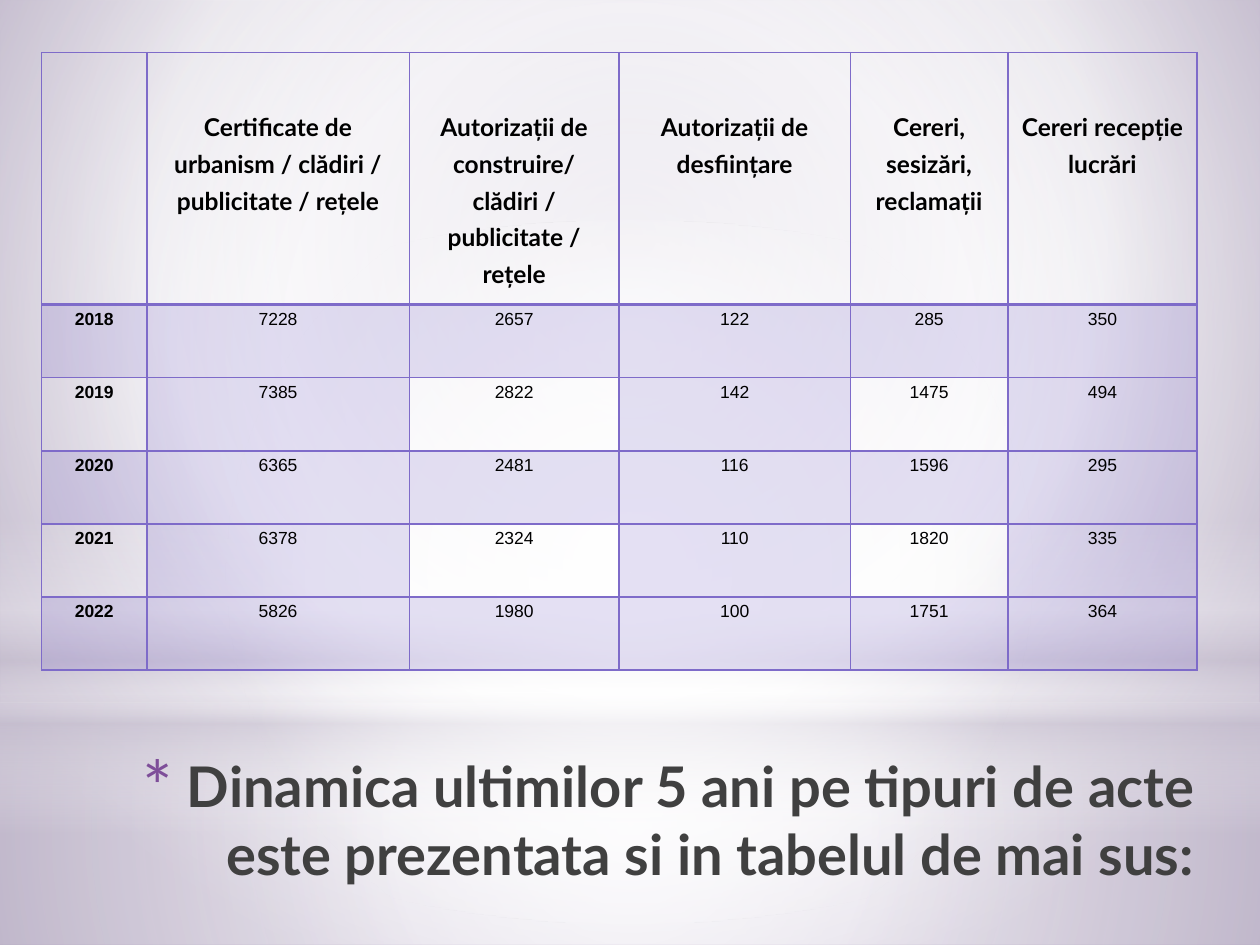
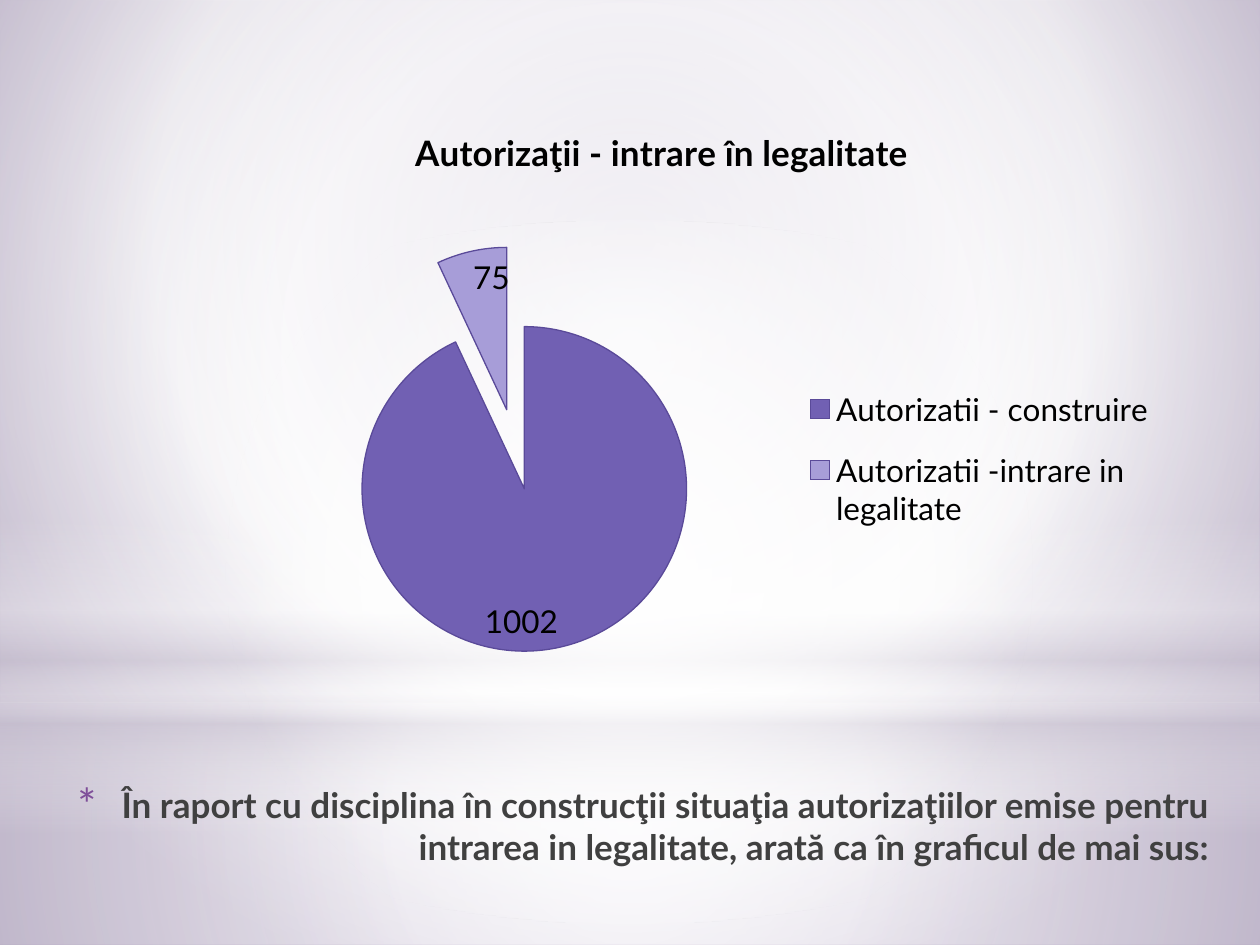
from lxml.etree import SubElement
from pptx import Presentation
from pptx.chart.data import CategoryChartData
from pptx.dml.color import RGBColor
from pptx.enum.chart import XL_CHART_TYPE, XL_LABEL_POSITION, XL_LEGEND_POSITION
from pptx.enum.shapes import MSO_SHAPE
from pptx.enum.text import MSO_ANCHOR, MSO_AUTO_SIZE, PP_ALIGN
from pptx.oxml.ns import qn
from pptx.oxml.xmlchemy import OxmlElement
from pptx.util import Cm, Pt

# Shared colours and fonts
BLACK = RGBColor(0x00, 0x00, 0x00)
WHITE = RGBColor(0xFF, 0xFF, 0xFF)
CHARCOAL = RGBColor(0x40, 0x40, 0x40)
GREY = RGBColor(0x69, 0x67, 0x6D)
MIST = RGBColor(0xC9, 0xC2, 0xD1)
LILAC = RGBColor(0xC1, 0xB7, 0xCD)
MAUVE = RGBColor(0xA1, 0x91, 0xB5)
VIOLET = RGBColor(0x7E, 0x6B, 0xC9)
BULLET_PURPLE = RGBColor(0x7E, 0x4E, 0x99)
PIE_DARK = RGBColor(0x71, 0x60, 0xB3)
PIE_LIGHT = RGBColor(0xA7, 0x9D, 0xD8)
PIE_LINE = RGBColor(0x5A, 0x4A, 0x99)
HEAD_FONT = "Lato"
BODY_FONT = "Arial"

CENTRE = (50, 50, 50, 50)
TITLE_STOPS = [(0, BLACK, 100), (40, CHARCOAL, 100), (100, GREY, 65)]
BACKGROUND_STOPS = [(0, LILAC, 100), (60, WHITE, 100), (100, MAUVE, 100)]

# Backdrop: shape, top and height in cm, gradient stops, circle centre (None = vertical)
BACKDROP = [
    (MSO_SHAPE.RECTANGLE, 14.17, 4.88,
     [(0, WHITE, 91), (37, WHITE, 76), (100, MIST, 79)], CENTRE),
    (MSO_SHAPE.RECTANGLE, 0, 14.17,
     [(0, WHITE, 89), (48, WHITE, 62), (100, MIST, 79)], CENTRE),
    (MSO_SHAPE.RECTANGLE, 10.46, 6.35,
     [(0, WHITE, 0), (29, WHITE, 30), (45, MIST, 40), (55, WHITE, 26),
      (65, MIST, 60), (100, WHITE, 0)], None),
    (MSO_SHAPE.OVAL, 4.45, 14.17, [(0, WHITE, 100), (56, WHITE, 0)], CENTRE),
]

HEADERS = ["", "Certificate de urbanism / clădiri / publicitate / rețele",
           "Autorizații de construire/ clădiri / publicitate / rețele",
           "Autorizații de desființare", "Cereri, sesizări, reclamații",
           "Cereri recepție lucrări"]
ACTS_BY_YEAR = [
    (2018, 7228, 2657, 122, 285, 350),
    (2019, 7385, 2822, 142, 1475, 494),
    (2020, 6365, 2481, 116, 1596, 295),
    (2021, 6378, 2324, 110, 1820, 335),
    (2022, 5826, 1980, 100, 1751, 364),
]
COLUMN_WIDTHS = [2.12, 5.29, 4.23, 4.66, 3.18, 3.81]


def style(target, **values):
    for name, value in values.items():
        setattr(target, name, value)


def add_child(parent, tag, **attributes):
    child = SubElement(parent, qn(tag))
    for name, value in attributes.items():
        child.set(name, str(value))
    return child


def set_gradient(fill, holder, stops, centre=None):
    """Fill with a circular gradient, or a vertical one when there is no centre."""
    fill.gradient()
    grad = OxmlElement("a:gradFill")
    grad.set("rotWithShape", "1")
    gs_list = add_child(grad, "a:gsLst")
    for position, colour, alpha in stops:
        gs = add_child(gs_list, "a:gs", pos=position * 1000)
        clr = add_child(gs, "a:srgbClr", val=colour)
        if alpha < 100:
            add_child(clr, "a:alpha", val=alpha * 1000)
    if centre:
        circle = add_child(grad, "a:path", path="circle")
        add_child(circle, "a:fillToRect",
                  **{side: value * 1000 for side, value in zip("ltrb", centre)})
    else:
        add_child(grad, "a:lin", ang=5400000, scaled=0)
    holder.replace(holder.find(qn("a:gradFill")), grad)


def build_backdrop(prs, layout):
    """Draw the shared backdrop and place it beneath the layout's placeholders."""
    master = prs.slide_master
    fill = master.background.fill
    fill.gradient()
    set_gradient(fill, next(master.element.iter(qn("p:bgPr"))),
                 BACKGROUND_STOPS, (20, 10, 20, 60))
    s = prs.slides[0]
    for i, (kind, top, height, stops, centre) in enumerate(BACKDROP):
        sp = s.shapes.add_shape(kind, 0, Cm(top), prs.slide_width, Cm(height))
        sp.shadow.inherit = False
        sp.line.fill.background()
        set_gradient(sp.fill, sp.element.spPr, stops, centre)
        layout.shapes.element.insert(2 + i, sp.element)


def set_title(s, text, box, size):
    sp = s.shapes.title
    style(sp, **dict(zip(("left", "top", "width", "height"), map(Cm, box))))
    tf = sp.text_frame
    style(tf, word_wrap=True, auto_size=MSO_AUTO_SIZE.NONE,
          vertical_anchor=MSO_ANCHOR.TOP)
    p = tf.paragraphs[0]
    p.alignment = PP_ALIGN.RIGHT
    # Asterisk bullet with a hanging indent
    pPr = p._p.get_or_add_pPr()
    pPr.set("marL", str(Cm(0.89)))
    pPr.set("indent", str(-Cm(0.89)))
    add_child(add_child(pPr, "a:buClr"), "a:srgbClr", val=BULLET_PURPLE)
    add_child(pPr, "a:buSzPct", val=128000)
    add_child(pPr, "a:buFont", typeface=HEAD_FONT)
    add_child(pPr, "a:buChar", char="*")
    r = p.add_run()
    r.text = text
    style(r.font, name=HEAD_FONT, size=Pt(size), bold=True)
    set_gradient(r.font.fill, r._r.rPr, TITLE_STOPS)


def set_borders(cell, widths):
    tcPr = cell._tc.get_or_add_tcPr()
    for i, (side, width) in enumerate(widths.items()):
        ln = OxmlElement(f"a:ln{side}")
        ln.set("w", str(Pt(width)))
        add_child(add_child(ln, "a:solidFill"), "a:srgbClr", val=VIOLET)
        tcPr.insert(i, ln)


def fill_cell(cell, row, col, text):
    is_header = row == 0
    style(cell, margin_left=Cm(0.18), margin_right=Cm(0.18), margin_bottom=0,
          margin_top=Cm(1.06) if is_header else 0, vertical_anchor=MSO_ANCHOR.TOP)
    # Tint every other row and every other column
    if not is_header and (row % 2 or col % 2):
        cell.fill.solid()
        cell.fill.fore_color.rgb = VIOLET
        add_child(next(cell._tc.tcPr.iter(qn("a:srgbClr"))), "a:alpha", val=20000)
    else:
        cell.fill.background()
    set_borders(cell, {"L": 1, "R": 1, "T": 2 if row == 1 else 1,
                       "B": 2 if is_header else 1})
    p = cell.text_frame.paragraphs[0]
    style(p, alignment=PP_ALIGN.CENTER, line_spacing=1.25)
    if text:
        r = p.add_run()
        r.text = text
        style(r.font, name=HEAD_FONT if is_header else BODY_FONT,
              size=Pt(14 if is_header else 10), bold=is_header or col == 0)
        r.font.color.rgb = BLACK


def add_acts_table(s):
    rows = [HEADERS, *ACTS_BY_YEAR]
    table = s.shapes.add_table(len(rows), len(HEADERS), Cm(0.84), Cm(1.06),
                               Cm(sum(COLUMN_WIDTHS)), Cm(12.45)).table
    style(table, first_row=False, horz_banding=False)
    for column, width in zip(table.columns, COLUMN_WIDTHS):
        column.width = Cm(width)
    for i, values in enumerate(rows):
        table.rows[i].height = Cm(1.474 if i else 5.08)
        for j, value in enumerate(values):
            fill_cell(table.cell(i, j), i, j, str(value))


def manual_layout(x, y, w, h, inner=False):
    layout = OxmlElement("c:layout")
    manual = add_child(layout, "c:manualLayout")
    if inner:
        add_child(manual, "c:layoutTarget", val="inner")
    for tag in ("xMode", "yMode"):
        add_child(manual, f"c:{tag}", val="edge")
    for tag, value in zip("xywh", (x, y, w, h)):
        add_child(manual, f"c:{tag}", val=value)
    return layout


def add_permits_pie(s):
    data = CategoryChartData()
    data.categories = ["Autorizatii - construire", "Autorizatii -intrare in legalitate"]
    data.add_series("Series 1", (1002, 75))
    chart = s.shapes.add_chart(XL_CHART_TYPE.PIE, Cm(3.18), Cm(2.03),
                               Cm(20.32), Cm(12.78), data).chart
    style(chart.font, name=HEAD_FONT, size=Pt(18))
    chart.font.color.rgb = BLACK

    # Title
    chart.has_title = True
    p = chart.chart_title.text_frame.paragraphs[0]
    r = p.add_run()
    r.text = "Autorizaţii - intrare în legalitate"
    style(r.font, name=HEAD_FONT, size=Pt(20), bold=True)
    r.font.color.rgb = BLACK

    # Legend
    chart.has_legend = True
    style(chart.legend, position=XL_LEGEND_POSITION.RIGHT, include_in_layout=False)
    position = chart.legend._element.find(qn("c:legendPos"))
    position.addnext(manual_layout(0.64, 0.42, 0.35, 0.29))

    # Plot area
    plot = chart.plots[0]
    plot.vary_by_categories = True
    plot_area = next(chart.element.iter(qn("c:plotArea")))
    for old in plot_area.findall(qn("c:layout")):
        plot_area.remove(old)
    plot_area.insert(0, manual_layout(0.07, 0.23, 0.57, 0.64, inner=True))

    # Slices
    series = plot.series[0]
    explosion = OxmlElement("c:explosion")
    explosion.set("val", "25")
    series._element.find(qn("c:tx")).addnext(explosion)
    for i, colour in enumerate((PIE_DARK, PIE_LIGHT)):
        look = series.points[i].format
        look.fill.solid()
        look.fill.fore_color.rgb = colour
        look.line.color.rgb = PIE_LINE
        look.line.width = Pt(0.75)

    # Value labels
    plot.has_data_labels = True
    style(plot.data_labels, show_value=True, show_percentage=False,
          position=XL_LABEL_POSITION.INSIDE_END)


def main():
    prs = Presentation()
    prs.slide_width, prs.slide_height = Cm(25.4), Cm(19.05)
    layout = prs.slide_layouts[5]

    # Acts by type and year
    s = prs.slides.add_slide(layout)
    build_backdrop(prs, layout)
    set_title(s, "Dinamica ultimilor 5 ani pe tipuri de acte este prezentata "
                 "si in tabelul de mai sus:", (1.06, 15.03, 23.29, 3.18), 32)
    add_acts_table(s)

    # Permits that bring buildings into legality
    s = prs.slides.add_slide(layout)
    set_title(s, "În raport cu disciplina în construcţii situaţia autorizaţiilor emise "
                 "pentru intrarea in legalitate, arată ca în graficul de mai sus:",
              (0.2, 15.66, 24.43, 3.18), 20)
    add_permits_pie(s)

    prs.save("out.pptx")


if __name__ == "__main__":
    main()
